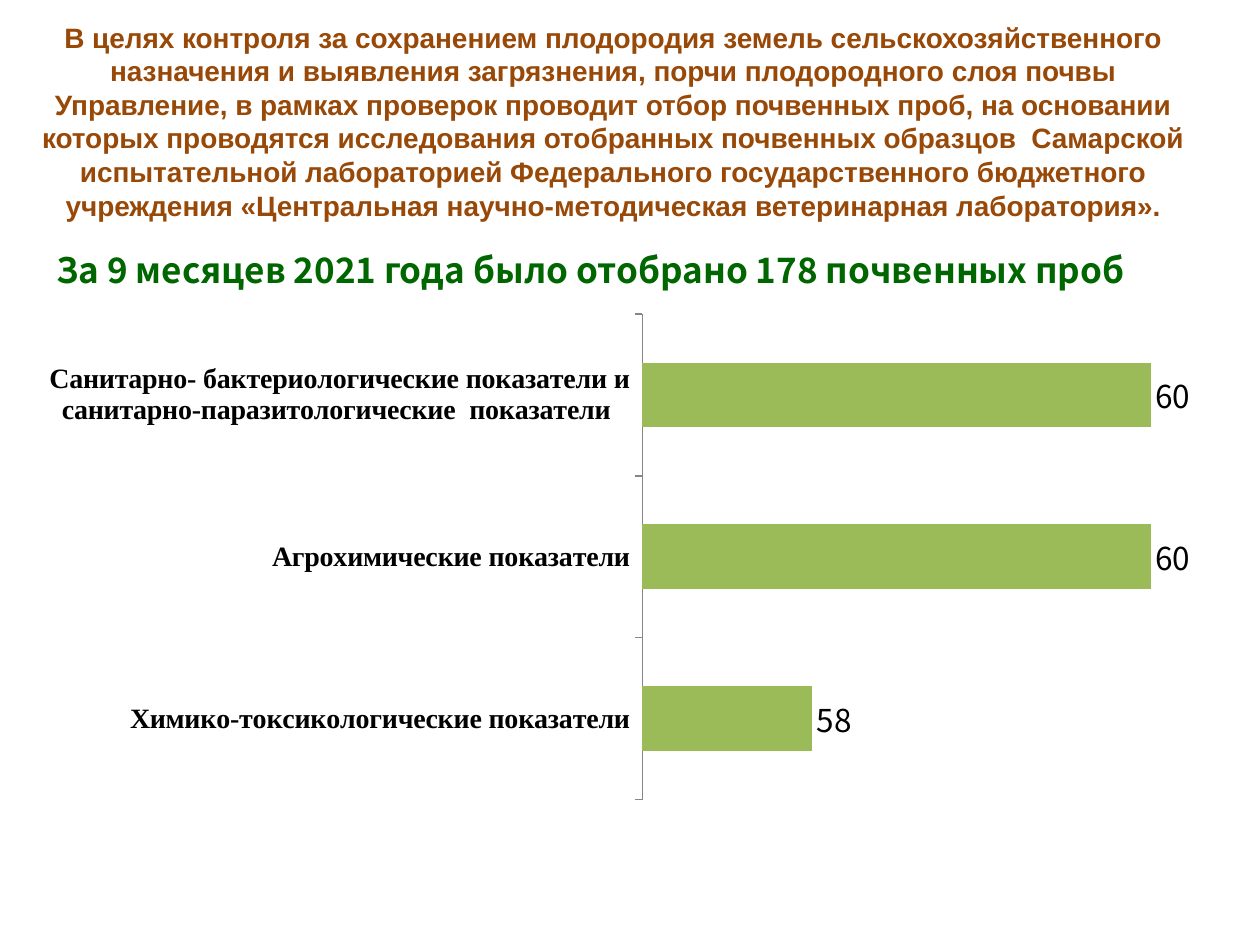
from pptx import Presentation
from pptx.chart.data import CategoryChartData
from pptx.dml.color import RGBColor
from pptx.enum.chart import XL_CHART_TYPE, XL_LABEL_POSITION, XL_TICK_MARK
from pptx.enum.text import MSO_ANCHOR, PP_ALIGN
from pptx.oxml import parse_xml
from pptx.oxml.ns import nsdecls
from pptx.util import Emu, Pt

PX = 7257  # EMU per px, 126 px to the inch
SANS = "Noto Sans CJK KR"


def style(font, name, size, color, bold=False):
    font.name, font.size, font.bold = name, Pt(size), bold
    font.color.rgb = RGBColor.from_string(color)


def add_text(box, text, align, *look):
    shape = slide.shapes.add_textbox(*[Emu(v * PX) for v in box])
    frame = shape.text_frame
    frame.word_wrap = True
    frame.vertical_anchor = MSO_ANCHOR.MIDDLE
    frame.text = text
    para = frame.paragraphs[0]
    para.alignment = align
    for run in para.runs:
        style(run.font, *look)


prs = Presentation()
prs.slide_width, prs.slide_height = Emu(1260 * PX), Emu(945 * PX)
slide = prs.slides.add_slide(prs.slide_layouts[6])

lines = [
    "В целях контроля за сохранением плодородия земель сельскохозяйственного",
    "назначения и выявления загрязнения, порчи плодородного слоя почвы",
    "Управление, в рамках проверок проводит отбор почвенных проб, на основании",
    "которых проводятся исследования отобранных почвенных образцов  Самарской",
    "испытательной лабораторией Федерального государственного бюджетного",
    "учреждения «Центральная научно-методическая ветеринарная лаборатория».",
]
add_text((0, 20, 1227, 202), "\v".join(lines), PP_ALIGN.CENTER,
         "Arial", 16, "984807", True)
add_text((44, 234, 1172, 70),
         "За 9 месяцев 2021 года было отобрано 178 почвенных проб",
         PP_ALIGN.LEFT, SANS, 20, "006600", True)

data = CategoryChartData()
data.categories = [
    "Химико-токсикологические показатели",
    "Агрохимические показатели",
    "Санитарно- бактериологические показатели и "
    "санитарно-паразитологические  показатели ",
]
data.add_series("Series 1", (58, 60, 60))
box = [Emu(v * PX) for v in (25, 304, 1235, 506)]
chart = slide.shapes.add_chart(XL_CHART_TYPE.BAR_CLUSTERED, *box, data).chart
chart.has_legend = chart.has_title = False
style(chart.font, SANS, 18, "000000")

cats = chart.category_axis
style(cats.tick_labels.font, "Times New Roman", 16, "000000", True)
cats.major_tick_mark = XL_TICK_MARK.OUTSIDE
cats.format.line.color.rgb = RGBColor.from_string("868686")
vals = chart.value_axis
vals.minimum_scale, vals.maximum_scale = 57, 60.5
vals.has_major_gridlines = vals.visible = False

plot = chart.plots[0]
plot.gap_width = 150
plot.vary_by_categories = False
fill = plot.series[0].format.fill
fill.solid()
fill.fore_color.rgb = RGBColor.from_string("9BBB59")
plot.has_data_labels = True
labels = plot.data_labels
labels.show_value = True
labels.position = XL_LABEL_POSITION.OUTSIDE_END
style(labels.font, SANS, 18, "000000")

# Fix the inner plot area as shares of the chart frame
area = chart._chartSpace.chart.plotArea
for old in area.findall("{*}layout"):
    area.remove(old)
marks = "".join(f'<c:{tag} val="{val}"/>' for tag, val in (
    ("layoutTarget", "inner"), ("xMode", "edge"), ("yMode", "edge"),
    ("x", 0.5), ("y", 0.02), ("w", 0.48), ("h", 0.96)))
area.insert(0, parse_xml(
    f'<c:layout {nsdecls("c")}><c:manualLayout>{marks}</c:manualLayout></c:layout>'))

prs.save("out.pptx")
